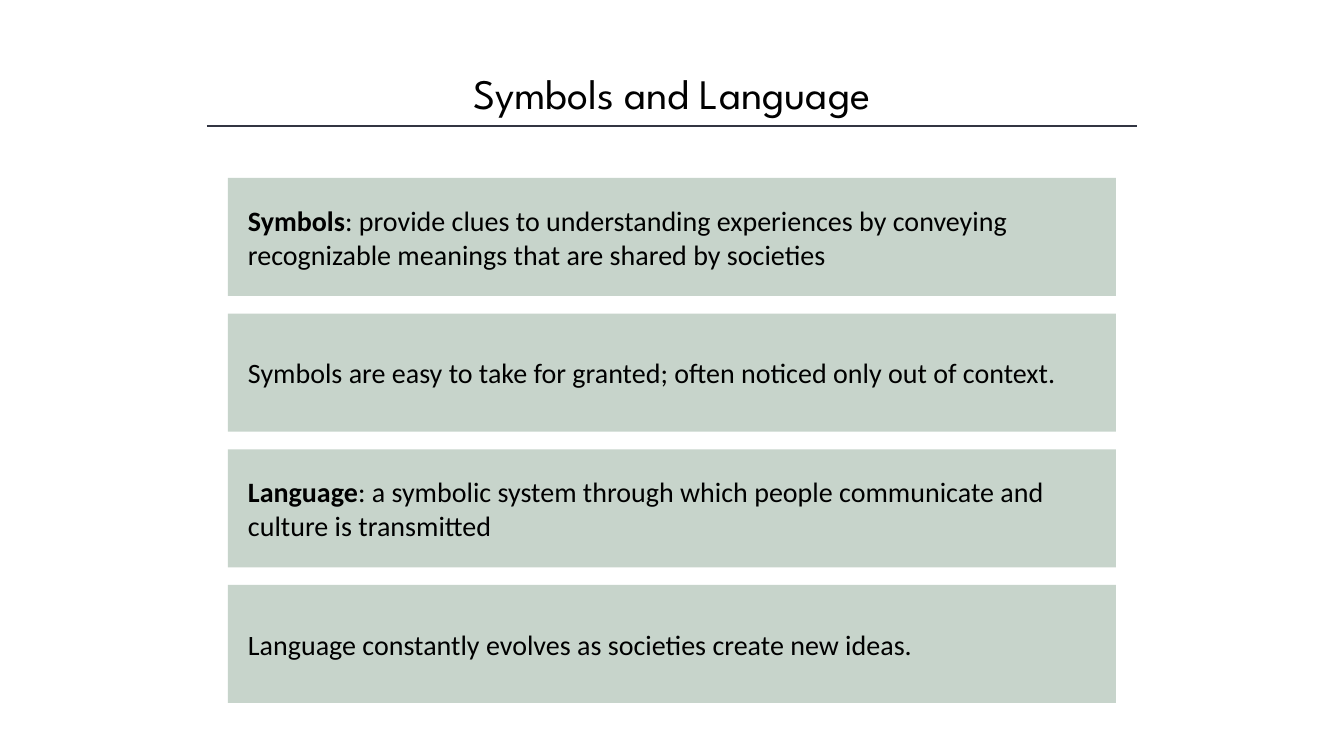
from pptx import Presentation
from pptx.dml.color import RGBColor
from pptx.enum.shapes import MSO_CONNECTOR, MSO_SHAPE
from pptx.enum.text import MSO_ANCHOR, PP_ALIGN
from pptx.util import Pt

BLACK = RGBColor(0x00, 0x00, 0x00)
SLATE = RGBColor(0x32, 0x35, 0x42)
SAGE = RGBColor(0xC7, 0xD4, 0xCB)


def px(n):
    return round(n * 914400 / 100.8)


deck = Presentation()
deck.slide_width, deck.slide_height = px(1344), px(756)
slide = deck.slides.add_slide(deck.slide_layouts[6])
shapes = slide.shapes

# Title
title = shapes.add_textbox(px(168), px(63), px(1008), px(61))
title.text_frame.word_wrap = True
para = title.text_frame.paragraphs[0]
para.text = "Symbols and Language"
para.alignment = PP_ALIGN.CENTER
para.font.name = "League Spartan"
para.font.size = Pt(30)
para.font.color.rgb = BLACK

# Rule under the title
rule = shapes.add_connector(MSO_CONNECTOR.STRAIGHT, px(207), px(126), px(1137), px(126))
rule.line.color.rgb = SLATE
rule.line.width = Pt(1)
props = rule._element.spPr
props.append(props.makeelement("{http://schemas.openxmlformats.org/drawingml/2006/main}effectLst", {}))

# Cards: bold term, then the rest of the sentence
cards = [
    ("Symbols", ": provide clues to understanding experiences by conveying "
                "recognizable meanings that are shared by societies"),
    ("", "Symbols are easy to take for granted; often noticed only out of context."),
    ("Language", ": a symbolic system through which people communicate and "
                 "culture is transmitted"),
    ("", "Language constantly evolves as societies create new ideas."),
]
TOP, SPAN = 178, 407  # first card's top, distance to the last card's top

for i, (term, rest) in enumerate(cards):
    top = TOP + SPAN * i / (len(cards) - 1)
    card = shapes.add_shape(MSO_SHAPE.RECTANGLE, px(228), px(top), px(888), px(118))
    card.shadow.inherit = False
    card.fill.solid()
    card.fill.fore_color.rgb = SAGE
    card.line.fill.background()

    frame = card.text_frame
    frame.word_wrap = True
    frame.vertical_anchor = MSO_ANCHOR.MIDDLE
    frame.margin_left, frame.margin_right = px(20), px(27)
    para = frame.paragraphs[0]
    para.alignment = PP_ALIGN.LEFT
    para.font.name = "Calibri"
    para.font.size = Pt(20)
    para.font.color.rgb = BLACK
    if term:
        run = para.add_run()
        run.text = term
        run.font.bold = True
    para.add_run().text = rest

deck.save("out.pptx")
